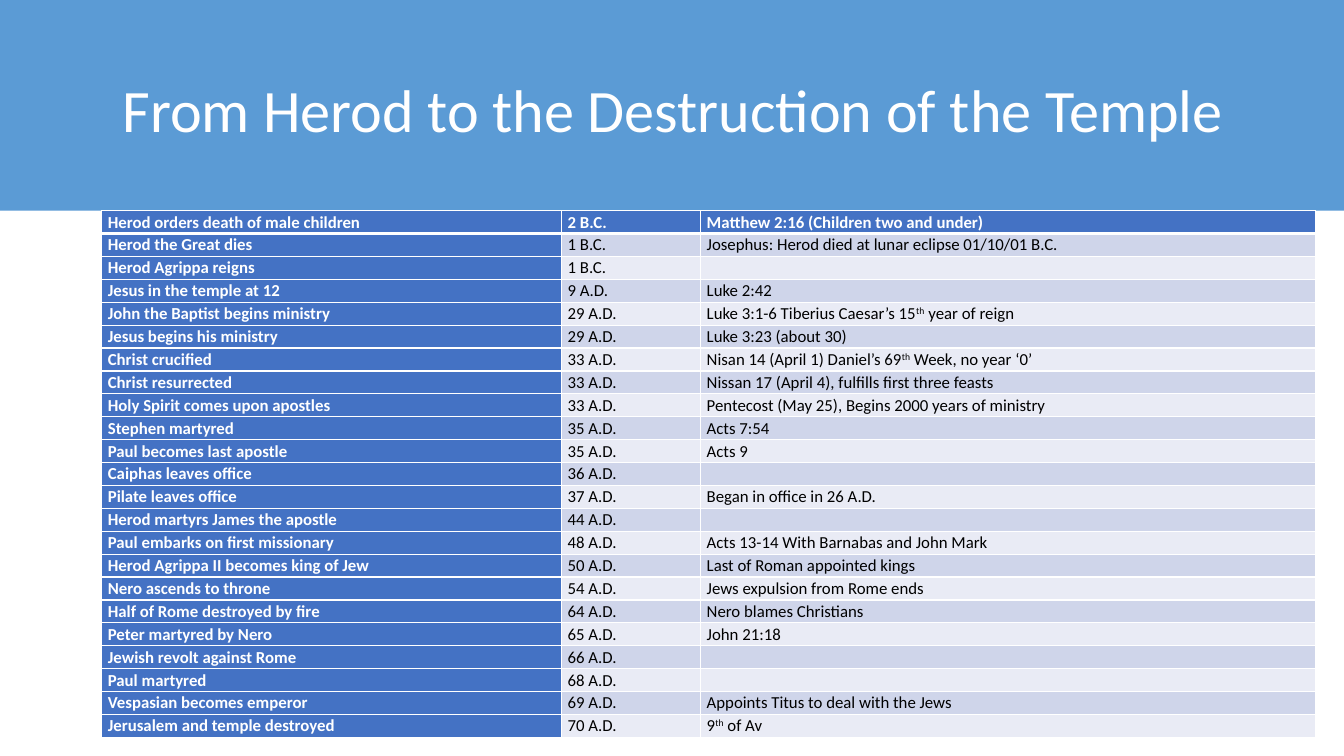
from lxml.etree import SubElement
from pptx import Presentation
from pptx.dml.color import RGBColor
from pptx.enum.shapes import MSO_SHAPE
from pptx.enum.text import MSO_ANCHOR, PP_ALIGN
from pptx.oxml.ns import qn
from pptx.util import Inches, Pt

COLORS = {
    "band": "5B9BD5",
    "header": "4472C4",
    "odd": "CFD5EA",
    "even": "E9EBF5",
    "white": "FFFFFF",
    "black": "000000",
}
EVENTS = [
    ("Herod orders death of male children", "2 B.C.", "Matthew 2:16 (Children two and under)"),
    ("Herod the Great dies", "1 B.C.", "Josephus: Herod died at lunar eclipse 01/10/01 B.C."),
    ("Herod Agrippa reigns", "1 B.C.", ""),
    ("Jesus in the temple at 12", "9 A.D.", "Luke 2:42"),
    ("John the Baptist begins ministry", "29 A.D.", "Luke 3:1-6 Tiberius Caesar’s 15^th^ year of reign"),
    ("Jesus begins his ministry", "29 A.D.", "Luke 3:23 (about 30)"),
    ("Christ crucified", "33 A.D.", "Nisan 14 (April 1) Daniel’s 69^th^ Week, no year ‘0’"),
    ("Christ resurrected", "33 A.D.", "Nissan 17 (April 4), fulfills first three feasts"),
    ("Holy Spirit comes upon apostles", "33 A.D.", "Pentecost (May 25), Begins 2000 years of ministry"),
    ("Stephen martyred", "35 A.D.", "Acts 7:54"),
    ("Paul becomes last apostle", "35 A.D.", "Acts 9"),
    ("Caiphas leaves office", "36 A.D.", ""),
    ("Pilate leaves office", "37 A.D.", "Began in office in 26 A.D."),
    ("Herod martyrs James the apostle", "44 A.D.", ""),
    ("Paul embarks on first missionary", "48 A.D.", "Acts 13-14 With Barnabas and John Mark"),
    ("Herod Agrippa II becomes king of Jew", "50 A.D.", "Last of Roman appointed kings"),
    ("Nero ascends to throne", "54 A.D.", "Jews expulsion from Rome ends"),
    ("Half of Rome destroyed by fire", "64 A.D.", "Nero blames Christians"),
    ("Peter martyred by Nero", "65 A.D.", "John 21:18"),
    ("Jewish revolt against Rome", "66 A.D.", ""),
    ("Paul martyred", "68 A.D.", ""),
    ("Vespasian becomes emperor", "69 A.D.", "Appoints Titus to deal with the Jews"),
    ("Jerusalem and temple destroyed", "70 A.D.", "9^th^ of Av"),
]


def format_font(font, color, **values):
    for name, value in {"name": "Calibri", **values}.items():
        setattr(font, name, value)
    font.color.rgb = RGBColor.from_string(COLORS[color])


def add_borders(cell, widths):
    properties = cell._tc.get_or_add_tcPr()
    for side, width in widths.items():
        line = SubElement(properties, qn(f"a:ln{side}"), w=str(Pt(width)))
        fill = SubElement(line, qn("a:solidFill"))
        SubElement(fill, qn("a:srgbClr"), val=COLORS["white"])


deck = Presentation()
deck.slide_width, deck.slide_height = Inches(13.33), Inches(7.5)
page = deck.slides.add_slide(deck.slide_layouts[5])

band = page.shapes.add_shape(MSO_SHAPE.RECTANGLE, 0, 0, deck.slide_width, Inches(2.09))
band.shadow.inherit = False
band.fill.solid()
band.fill.fore_color.rgb = RGBColor.from_string(COLORS["band"])
band.line.fill.background()
page.shapes._spTree.insert(2, band._element)

title = page.shapes.title
title_place = {"left": 0.92, "top": 0.4, "width": 11.5, "height": 1.45}
for name, value in title_place.items():
    setattr(title, name, Inches(value))
title.text_frame.word_wrap = True
title.text_frame.vertical_anchor = MSO_ANCHOR.MIDDLE
para = title.text_frame.paragraphs[0]
para.alignment = PP_ALIGN.CENTER
para.line_spacing = 0.9
span = para.add_run()
span.text = "From Herod to the Destruction of the Temple"
format_font(span.font, "white", size=Pt(43))

row_height = Inches(5.23) // len(EVENTS)
frame = page.shapes.add_table(
    len(EVENTS), 3, Inches(1.01), Inches(2.09), Inches(12.04), row_height * len(EVENTS)
)
timeline = frame.table
for column, width in zip(timeline.columns, (4.56, 1.38, 6.1)):
    column.width = Inches(width)

cell_margins = {
    "margin_left": Inches(0.06),
    "margin_right": Inches(0.06),
    "margin_top": 0,
    "margin_bottom": 0,
}
for row_index, event in enumerate(EVENTS):
    timeline.rows[row_index].height = row_height
    for column_index, text in enumerate(event):
        cell = timeline.cell(row_index, column_index)
        heading = row_index == 0 or column_index == 0
        for name, value in cell_margins.items():
            setattr(cell, name, value)
        add_borders(cell, {
            "L": 1,
            "R": 1,
            "T": 3 if row_index == 1 else 1,
            "B": 3 if row_index == 0 else 1,
        })
        shade = "header" if heading else "odd" if row_index % 2 else "even"
        cell.fill.solid()
        cell.fill.fore_color.rgb = RGBColor.from_string(COLORS[shade])
        para = cell.text_frame.paragraphs[0]
        para.line_spacing = 1.07
        if not text:
            SubElement(para._p, qn("a:endParaRPr"), sz="1200")
            continue
        for part_index, part in enumerate(text.split("^")):
            span = para.add_run()
            span.text = part
            format_font(span.font, "white" if heading else "black", size=Pt(12), bold=heading)
            if part_index % 2:
                span._r.get_or_add_rPr().set("baseline", "30000")

deck.save("out.pptx")
